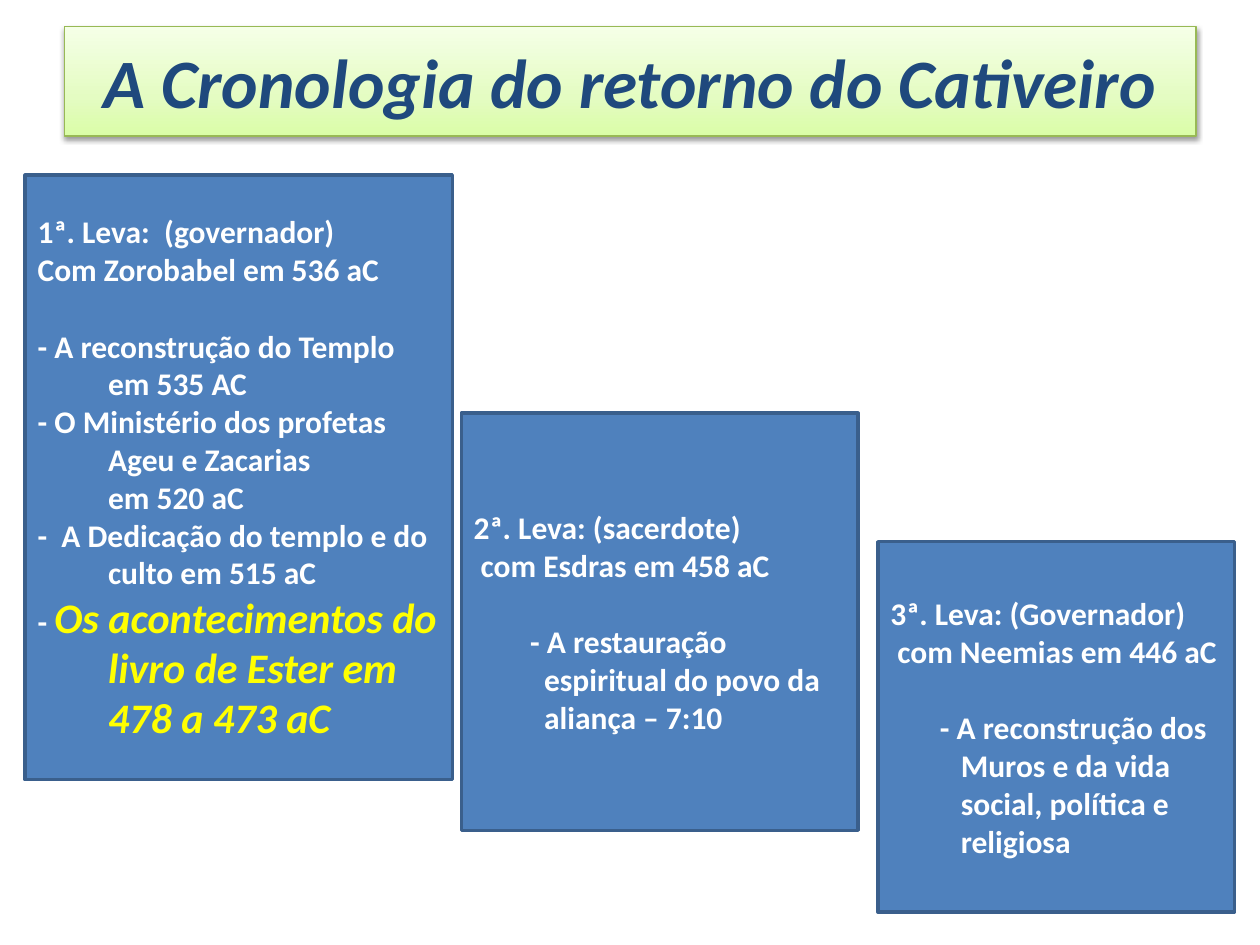
from lxml.etree import fromstring
from pptx import Presentation
from pptx.dml.color import RGBColor
from pptx.enum.shapes import MSO_SHAPE
from pptx.enum.text import MSO_ANCHOR, MSO_AUTO_SIZE, PP_ALIGN
from pptx.util import Cm, Pt

COLORS = {
    "title": "1F497D", "title_line": "98B955",
    "gradient_bottom": "DAFDA7", "gradient_middle": "E4FCC2", "gradient_top": "F5FFE7",
    "box": "4F81BD", "box_line": "3A5F8C",
    "text": "FFFFFF", "highlight": "FFFF00", "shadow": "000000",
}
NAMESPACE = 'xmlns:a="http://schemas.openxmlformats.org/drawingml/2006/main"'
HANGING = 1.42
BLANK_LINE = 22


def add_text(paragraph, text, size=18, color="text", italic=False,
             start=None, space_before=0, align=PP_ALIGN.LEFT):
    """Add a bold run; start is where the first line begins, in cm, before a hanging indent."""
    paragraph.alignment = align
    if start is not None:
        paragraph.space_before = Pt(space_before)
        properties = paragraph._p.get_or_add_pPr()
        properties.set("marL", str(Cm(HANGING)))
        properties.set("indent", str(Cm(start - HANGING)))
    run = paragraph.add_run()
    run.text = text
    run.font.name = "Calibri"
    run.font.size = Pt(size)
    run.font.bold = True
    run.font.italic = italic
    run.font.color.rgb = RGBColor.from_string(COLORS[color])


presentation = Presentation()
presentation.slide_width, presentation.slide_height = Cm(25.4), Cm(19.05)
slide = presentation.slides.add_slide(presentation.slide_layouts[5])

# Title with gradient and soft shadow
title = slide.shapes.title
title.left, title.top, title.width, title.height = Cm(1.3), Cm(0.53), Cm(22.81), Cm(2.21)
stops = "".join(
    f'<a:gs pos="{position * 1000}"><a:srgbClr val="{COLORS[name]}"/></a:gs>'
    for position, name in [(0, "gradient_bottom"), (35, "gradient_middle"), (100, "gradient_top")]
)
title._element.spPr.append(fromstring(
    f'<a:gradFill {NAMESPACE} rotWithShape="1"><a:gsLst>{stops}</a:gsLst>'
    '<a:lin ang="16200000" scaled="1"/></a:gradFill>'))
title.line.color.rgb = RGBColor.from_string(COLORS["title_line"])
title.line.width = Pt(0.75)
title._element.spPr.append(fromstring(
    f'<a:effectLst {NAMESPACE}><a:outerShdw blurRad="{Pt(3.1)}" dist="{Pt(1.6)}" dir="5400000" '
    f'rotWithShape="0"><a:srgbClr val="{COLORS["shadow"]}"><a:alpha val="38000"/></a:srgbClr>'
    '</a:outerShdw></a:effectLst>'))
title.text_frame.auto_size = MSO_AUTO_SIZE.NONE
title.text_frame.vertical_anchor = MSO_ANCHOR.MIDDLE
add_text(title.text_frame.paragraphs[0], "A Cronologia do retorno do Cativeiro",
         size=39.6, color="title", italic=True, align=PP_ALIGN.CENTER)

# Each box: left, top, width, height, then lines of (text, start, space before)
boxes = [
    (0.51, 3.53, 8.61, 12.19, [
        ("1ª. Leva:  (governador)", 0, 0),
        ("Com Zorobabel em 536 aC", 0, 0),
        ("- A reconstrução do Templo em 535 AC", 0, BLANK_LINE),
        ("- O Ministério dos profetas Ageu e Zacarias", 0, 0),
        ("em 520 aC", HANGING, 0),
        ("-  A Dedicação do templo e do culto em 515 aC", 0, 0),
        ("- ", 0, 0),
    ]),
    (9.3, 8.33, 8, 8.41, [
        ("2ª. Leva: (sacerdote)", 0, 0),
        ("com Esdras em 458 aC", 0.14, 0),
        ("- A restauração espiritual do povo da aliança – 7:10", 1.14, BLANK_LINE),
    ]),
    (17.7, 10.92, 7.19, 7.47, [
        ("3ª. Leva: (Governador)", 0, 0),
        ("com Neemias em 446 aC", 0.14, 0),
        ("- A reconstrução dos Muros e da vida social, política e religiosa", 1, BLANK_LINE),
    ]),
]
text_frames = []
for left, top, width, height, lines in boxes:
    box = slide.shapes.add_shape(MSO_SHAPE.RECTANGLE, Cm(left), Cm(top), Cm(width), Cm(height))
    box.shadow.inherit = False
    box.fill.solid()
    box.fill.fore_color.rgb = RGBColor.from_string(COLORS["box"])
    box.line.color.rgb = RGBColor.from_string(COLORS["box_line"])
    box.line.width = Pt(2)
    text_frame = box.text_frame
    text_frame.word_wrap = True
    text_frame.vertical_anchor = MSO_ANCHOR.MIDDLE
    for index, (text, start, space_before) in enumerate(lines):
        paragraph = text_frame.add_paragraph() if index else text_frame.paragraphs[0]
        add_text(paragraph, text, start=start, space_before=space_before)
    text_frames.append(text_frame)

# Highlighted end of the first box
add_text(text_frames[0].paragraphs[-1], "Os acontecimentos do livro de Ester em 478 a 473 aC",
         size=24, color="highlight", italic=True)

presentation.save("out.pptx")
